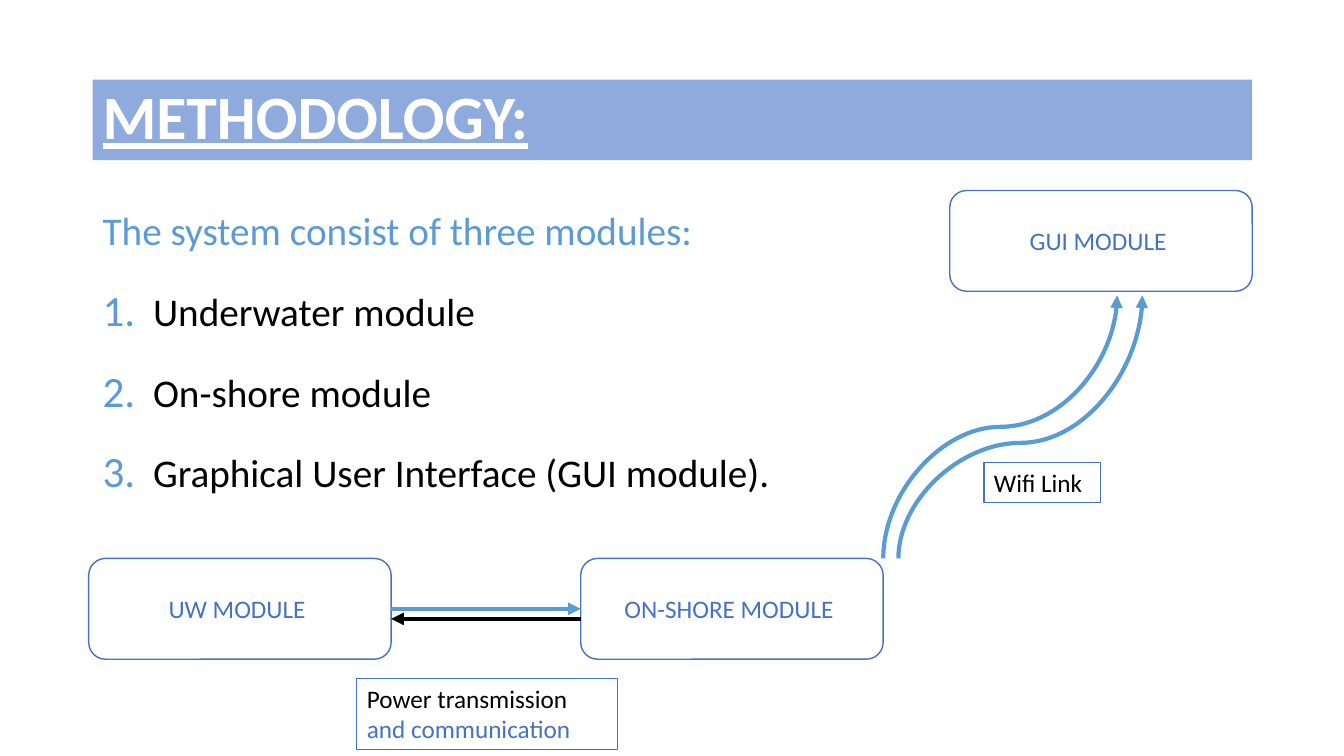
from dataclasses import dataclass
from typing import Optional

import pptx
import pptx.dml.color
import pptx.enum.dml
import pptx.enum.shapes
import pptx.enum.text
import pptx.oxml
import pptx.oxml.ns
import pptx.util

Inches = pptx.util.Inches
Pt = pptx.util.Pt
RGB = pptx.dml.color.RGBColor.from_string
qn = pptx.oxml.ns.qn
MSO_SHAPE = pptx.enum.shapes.MSO_SHAPE
MSO_CONNECTOR = pptx.enum.shapes.MSO_CONNECTOR
MSO_ANCHOR = pptx.enum.text.MSO_ANCHOR
PP_ALIGN = pptx.enum.text.PP_ALIGN
MSO_AUTO_SIZE = pptx.enum.text.MSO_AUTO_SIZE


@dataclass(frozen=True)
class Theme:
    font: str = "Calibri"
    banner: str = "8FAADC"
    white: str = "FFFFFF"
    black: str = "000000"
    blue: str = "4472C4"
    sky: str = "5B9BD5"
    title_size: int = 44
    body_size: int = 28
    label_size: int = 18
    arrow_width: int = 3


@dataclass(frozen=True)
class Box:
    left: float
    top: float
    width: float
    height: float
    shape: int = MSO_SHAPE.RECTANGLE
    fill: Optional[str] = None
    line: Optional[str] = None
    line_width: float = 1


@dataclass(frozen=True)
class Module:
    name: str
    left: float
    top: float


@dataclass(frozen=True)
class Label:
    box: Box
    runs: tuple


@dataclass(frozen=True)
class WifiCurve:
    start_x: float
    end_x: float
    bend: int


THEME = Theme()
TITLE = Box(0.92, 0.79, 11.5, 0.8, fill=THEME.banner)
ITEMS = ("Underwater module", "On-shore module", "Graphical User Interface (GUI module).")
MODULE_WIDTH, MODULE_HEIGHT = 3, 1
UW = Module("UW MODULE ", 0.88, 5.54)
ON_SHORE = Module("ON-SHORE MODULE ", 5.76, 5.54)
GUI = Module("GUI MODULE ", 9.42, 1.89)
WIFI_BOTTOM, WIFI_TOP = 5.54, 2.93
CURVES = (WifiCurve(8.76, 11.08, 50000), WifiCurve(8.91, 11.33, 43900))
LABELS = (
    Label(Box(9.76, 4.59, 1.16, 0.4, line=THEME.blue, line_width=0.75),
          (("Wifi Link", THEME.black),)),
    Label(Box(3.54, 6.73, 2.58, 0.71, line=THEME.blue, line_width=0.75),
          (("Power transmission ", THEME.black), ("and communication", THEME.blue))),
)


def add_text(p, text: str, *, size: int, color: str,
             bold: bool = False, underline: bool = False) -> None:
    r = p.add_run()
    r.text = text
    r.font.name = THEME.font
    r.font.size = Pt(size)
    r.font.color.rgb = RGB(color)
    r.font.bold = bold
    r.font.underline = underline


def add_box(s, box: Box):
    sp = s.shapes.add_shape(box.shape, Inches(box.left), Inches(box.top),
                            Inches(box.width), Inches(box.height))
    sp.shadow.inherit = False
    if box.fill:
        sp.fill.solid()
        sp.fill.fore_color.rgb = RGB(box.fill)
    else:
        sp.fill.background()
    if box.line:
        sp.line.color.rgb = RGB(box.line)
        sp.line.width = Pt(box.line_width)
    else:
        sp.line.fill.background()
    tf = sp.text_frame
    tf.word_wrap = True
    tf.vertical_anchor = MSO_ANCHOR.MIDDLE
    tf.paragraphs[0].alignment = PP_ALIGN.LEFT
    return sp


def add_title(s) -> None:
    p = add_box(s, TITLE).text_frame.paragraphs[0]
    p.line_spacing = 0.9
    add_text(p, "METHODOLOGY:", size=THEME.title_size, color=THEME.white,
             bold=True, underline=True)


def number_paragraph(p) -> None:
    pPr = p._p.get_or_add_pPr()
    pPr.set("marL", str(Inches(0.38)))
    pPr.set("indent", str(-Inches(0.38)))
    color = pptx.oxml.ns.nsdecls("a")
    for xml in (
        f'<a:buClr {color}><a:srgbClr val="{THEME.sky}"/></a:buClr>',
        f'<a:buSzPct {color} val="110000"/>',
        f'<a:buAutoNum {color} type="arabicPeriod"/>',
    ):
        pPr.append(pptx.oxml.parse_xml(xml))


def add_module_list(s) -> None:
    tf = s.shapes.add_textbox(Inches(0.92), Inches(2), Inches(11.5), Inches(3)).text_frame
    tf.word_wrap = True
    p = tf.paragraphs[0]
    p.space_after = Pt(12)
    add_text(p, "The system consist of three modules:", size=THEME.body_size, color=THEME.sky)
    for item in ITEMS:
        p = tf.add_paragraph()
        number_paragraph(p)
        p.space_before = p.space_after = Pt(12)
        add_text(p, "\t" + item, size=THEME.body_size, color=THEME.black)


def add_module(s, module: Module):
    sp = add_box(s, Box(module.left, module.top, MODULE_WIDTH, MODULE_HEIGHT,
                        MSO_SHAPE.ROUNDED_RECTANGLE, THEME.white, THEME.blue))
    p = sp.text_frame.paragraphs[0]
    p.alignment = PP_ALIGN.CENTER
    add_text(p, module.name, size=THEME.label_size, color=THEME.blue)
    return sp


def add_arrow(s, kind: int, start: tuple, end: tuple, color: str):
    cx = s.shapes.add_connector(kind, *(Inches(v) for v in (*start, *end)))
    cx.line.color.rgb = RGB(color)
    cx.line.width = Pt(THEME.arrow_width)
    ln = cx.line._get_or_add_ln()
    ln.append(ln.makeelement(qn("a:tailEnd"), {"type": "triangle"}))
    spPr = cx._element.spPr
    spPr.append(spPr.makeelement(qn("a:effectLst"), {}))
    return cx


def add_wifi_curve(s, curve: WifiCurve) -> None:
    mid_x = (curve.start_x + curve.end_x) / 2
    mid_y = (WIFI_BOTTOM + WIFI_TOP) / 2
    half_w = (WIFI_BOTTOM - WIFI_TOP) / 2
    half_h = (curve.end_x - curve.start_x) / 2
    cx = add_arrow(s, MSO_CONNECTOR.CURVE, (mid_x + half_w, mid_y + half_h),
                   (mid_x - half_w, mid_y - half_h), THEME.sky)
    spPr = cx._element.spPr
    spPr.find(qn("a:xfrm")).set("rot", str(90 * 60000))
    avLst = spPr.find(qn("a:prstGeom")).find(qn("a:avLst"))
    avLst.append(avLst.makeelement(qn("a:gd"), {"name": "adj1", "fmla": f"val {curve.bend}"}))


def add_label(s, label: Label) -> None:
    tf = add_box(s, label.box).text_frame
    tf.vertical_anchor = MSO_ANCHOR.TOP
    tf.auto_size = MSO_AUTO_SIZE.SHAPE_TO_FIT_TEXT
    for text, color in label.runs:
        add_text(tf.paragraphs[0], text, size=THEME.label_size, color=color)


def main() -> None:
    prs = pptx.Presentation()
    prs.slide_width, prs.slide_height = Inches(13.33), Inches(7.5)
    s = prs.slides.add_slide(prs.slide_layouts[6])
    add_title(s)
    add_module_list(s)
    uw, on_shore, _ = [add_module(s, module) for module in (UW, ON_SHORE, GUI)]
    uw_right = UW.left + MODULE_WIDTH
    middle = UW.top + MODULE_HEIGHT / 2
    link = add_arrow(s, MSO_CONNECTOR.STRAIGHT, (uw_right, middle),
                     (ON_SHORE.left, middle), THEME.sky)
    link.begin_connect(uw, 3)
    link.end_connect(on_shore, 1)
    add_arrow(s, MSO_CONNECTOR.STRAIGHT, (ON_SHORE.left, middle + 0.1),
              (uw_right, middle + 0.1), THEME.black)
    for curve in CURVES:
        add_wifi_curve(s, curve)
    for label in LABELS:
        add_label(s, label)
    prs.save("out.pptx")


if __name__ == "__main__":
    main()
